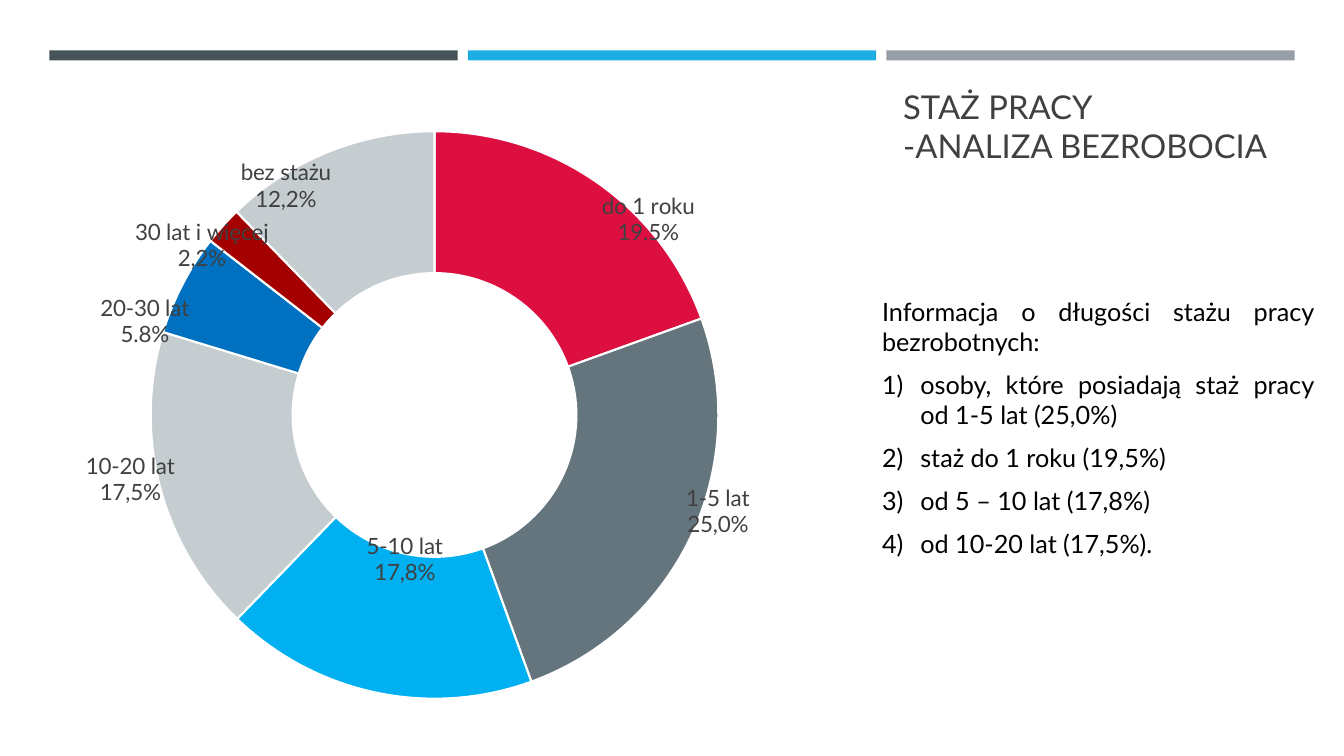
"""Builds a slide with a doughnut chart of job seniority among the unemployed."""
from math import cos, pi, sin

from lxml import etree
from pptx import Presentation
from pptx.chart.data import CategoryChartData
from pptx.dml.color import RGBColor
from pptx.enum.chart import XL_CHART_TYPE
from pptx.enum.shapes import MSO_SHAPE
from pptx.enum.text import MSO_ANCHOR, PP_ALIGN
from pptx.oxml.ns import qn
from pptx.util import Inches, Pt

RECT = MSO_SHAPE.RECTANGLE
DONUT = XL_CHART_TYPE.DOUGHNUT
JUSTIFY = PP_ALIGN.JUSTIFY
TOP, BOTTOM = MSO_ANCHOR.TOP, MSO_ANCHOR.BOTTOM

BLACK = RGBColor(0, 0, 0)
WHITE = RGBColor(255, 255, 255)
GRAY = RGBColor(0x40, 0x40, 0x40)
SLATE = RGBColor(0x46, 0x53, 0x59)
BLUE = RGBColor(0x1C, 0xAD, 0xE4)
STEEL = RGBColor(0x96, 0x9F, 0xA7)
RED = RGBColor(0xDD, 0x0F, 0x40)
STONE = RGBColor(0x65, 0x75, 0x7D)
SKY = RGBColor(0x00, 0xB0, 0xF0)
PALE = RGBColor(0xC6, 0xCD, 0xD1)
NAVY = RGBColor(0x00, 0x70, 0xC0)
WINE = RGBColor(0xA4, 0x00, 0x00)

BARS = [SLATE, BLUE, STEEL]
TITLE = ["STAŻ PRACY", "-ANALIZA BEZROBOCIA"]
INTRO = "Informacja o długości stażu pracy bezrobotnych:"
ITEMS = [
    "osoby, które posiadają staż pracy od 1-5 lat (25,0%)",
    "staż do 1 roku (19,5%)",
    "od 5 – 10 lat (17,8%)",
    "od 10-20 lat (17,5%).",
]
# name, value, color, typed share (None: computed), label center in inches
SLICES = [
    ("do 1 roku", 19.5, RED, None, (6.43, 2.17)),
    ("1-5 lat", 25, STONE, "25,0%", (7.12, 5.07)),
    ("5-10 lat", 17.8, SKY, "17,8%", (4.02, 5.54)),
    ("10-20 lat", 17.5, PALE, "17,5%", (1.29, 4.75)),
    ("20-30 lat", 5.8, NAVY, None, (1.44, 3.18)),
    ("30 lat i więcej", 2.2, WINE, "2,2%", (2.0, 2.43)),
    ("bez stażu", 12.3, PALE, "12,2%", (2.84, 1.84)),
]
CHART = (0, 1.18, 9.17, 6.12)
PLOT = {"x": 0.13, "y": 0.02, "w": 0.68, "h": 0.92}
SMALL = {"name": "Lato", "size": Pt(16)}
LARGE = {"name": "Lato", "size": Pt(23.4)}
PLAIN = {"name": "Lato", "size": Pt(18)}


def style(font, look, color):
    for key, value in look.items():
        setattr(font, key, value)
    font.color.rgb = color


def add_text(slide, box, lines, anchor, look, color):
    frame = slide.shapes.add_textbox(*map(Inches, box)).text_frame
    frame.word_wrap = True
    frame.vertical_anchor = anchor
    frame.text = "\n".join(lines)
    for para in frame.paragraphs:
        style(para.runs[0].font, look, color)
    return frame.paragraphs


def make(tag, **attrs):
    node = etree.Element(qn("c:" + tag))
    for key, value in attrs.items():
        node.set(key, str(value))
    return node


def layout(**fields):
    node = make("layout")
    manual = make("manualLayout")
    node.append(manual)
    for tag, value in fields.items():
        manual.append(make(tag, val=value))
    return node


def add_donut(slide):
    data = CategoryChartData()
    data.categories = [row[0] for row in SLICES]
    data.add_series("Series 1", [row[1] for row in SLICES])
    chart = slide.shapes.add_chart(DONUT, *map(Inches, CHART), data).chart
    chart.has_legend = chart.has_title = False
    style(chart.font, {"name": "Lato", "size": Pt(10)}, BLACK)
    root = chart.element
    area = root.find(".//" + qn("c:plotArea"))
    for old in area.findall(qn("c:layout")):
        area.remove(old)
    area.insert(0, layout(layoutTarget="inner", xMode="edge", yMode="edge", **PLOT))
    area.find(".//" + qn("c:holeSize")).set("val", "75")

    plot = chart.plots[0]
    plot.vary_by_categories = True
    series = plot.series[0]
    labels = series.data_labels
    labels.show_value = False
    labels.show_category_name = labels.show_percentage = True
    labels.number_format = "0.0%"
    labels.number_format_is_linked = False
    style(labels.font, SMALL, GRAY)

    left, top, wide, high = CHART
    mid_x = left + wide * (PLOT["x"] + PLOT["w"] / 2)
    mid_y = top + high * (PLOT["y"] + PLOT["h"] / 2)
    ring = 0.75 * high * PLOT["h"] / 2
    total = sum(row[1] for row in SLICES)
    done = 0
    for index, (name, value, color, share, (x, y)) in enumerate(SLICES):
        point = series.points[index]
        point.format.fill.solid()
        point.format.fill.fore_color.rgb = color
        point.format.line.color.rgb = WHITE
        point.format.line.width = Pt(1.5)
        label = point.data_label
        if share:
            label.text_frame.text = f"{name}\n{share}"
            for para in label.text_frame.paragraphs:
                style(para.runs[0].font, SMALL, GRAY)
        else:
            style(label.font, SMALL, GRAY)
        angle = 2 * pi * (done + value / 2) / total
        done += value
        shift_x = (x - mid_x - ring * sin(angle)) / wide
        shift_y = (y - mid_y + ring * cos(angle)) / high
        node = root.findall(".//" + qn("c:dLbl"))[index]
        node.insert(1, layout(x=round(shift_x, 3), y=round(shift_y, 3)))
        if not share:
            node.insert(2, make("numFmt", formatCode="0.0%", sourceLinked=0))
        for tag, shown in (("showVal", 0), ("showCatName", 1), ("showPercent", 1)):
            node.find(qn("c:" + tag)).set("val", str(shown))
        split = make("separator")
        split.text = "\n"
        node.append(split)


def main():
    deck = Presentation()
    deck.slide_width, deck.slide_height = Inches(13.33), Inches(7.5)
    slide = deck.slides.add_slide(deck.slide_layouts[6])
    for index, color in enumerate(BARS):
        box = (0.49 + 4.15 * index, 0.5, 4.05, 0.1)
        bar = slide.shapes.add_shape(RECT, *map(Inches, box))
        bar.shadow.inherit = False
        bar.fill.solid()
        bar.fill.fore_color.rgb = color
        bar.line.fill.background()
    add_donut(slide)
    add_text(slide, (8.86, 0.39, 4.55, 1.3), TITLE, BOTTOM, LARGE, GRAY)
    body = add_text(slide, (8.65, 2.89, 4.48, 2.83), [INTRO] + ITEMS, TOP, PLAIN, BLACK)
    for index, para in enumerate(body):
        para.alignment = JUSTIFY
        if index:
            para.space_before = Pt(9)
            props = para._p.get_or_add_pPr()
            props.set("marL", str(Inches(0.38)))
            props.set("indent", str(-Inches(0.38)))
            mark = etree.SubElement(props, qn("a:buAutoNum"))
            mark.set("type", "arabicParenR")
    deck.save("out.pptx")


if __name__ == "__main__":
    main()
